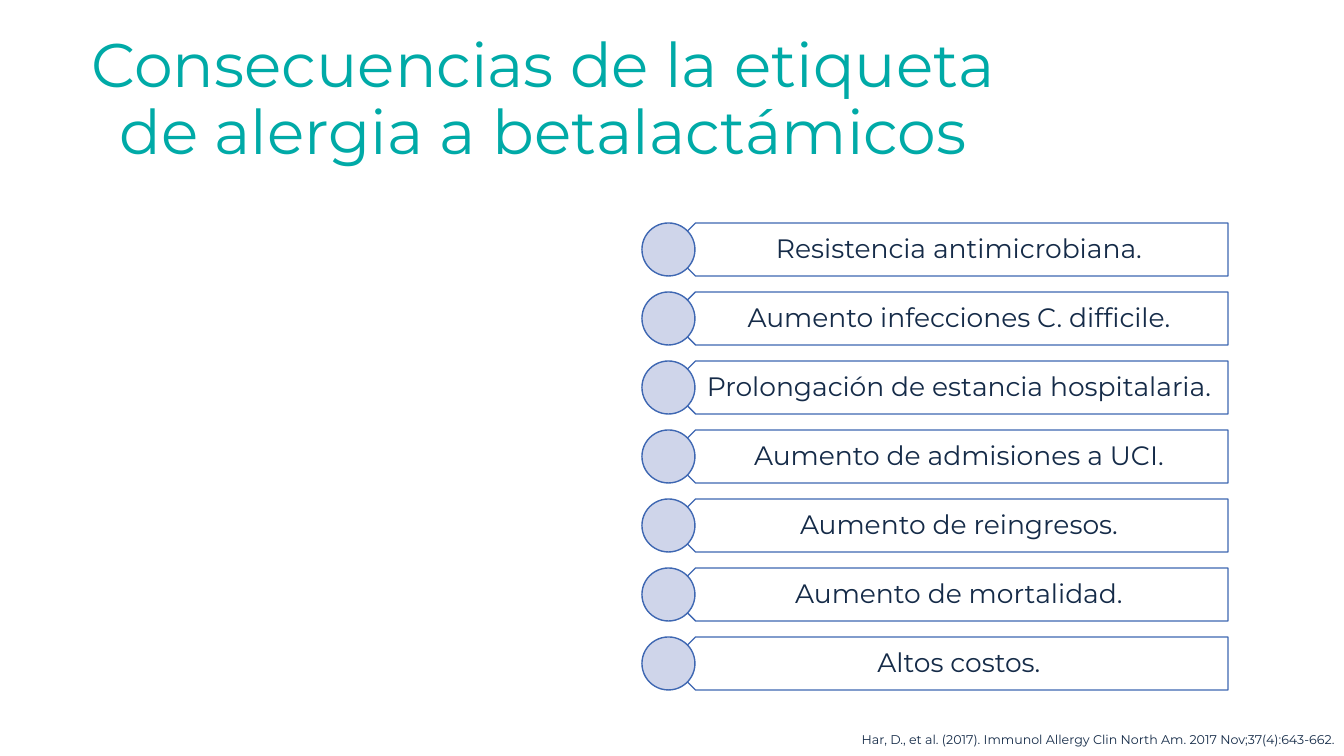
from pptx import Presentation
from pptx import util as u
from pptx.dml.color import RGBColor
from pptx.enum import shapes, text

TEAL = RGBColor(0x00, 0xAA, 0xA7)
NAVY = RGBColor(0x15, 0x2B, 0x48)
BLUE = RGBColor(0x3E, 0x67, 0xB2)
PALE = RGBColor(0xCF, 0xD5, 0xEA)
WHITE = RGBColor(0xFF, 0xFF, 0xFF)

WIDTH, HEIGHT = 1344, 756
TOP, PITCH, SIZE = 223, 69, 53
EFFECTS = (
    "Resistencia antimicrobiana.",
    "Aumento infecciones C. difficile.",
    "Prolongación de estancia hospitalaria.",
    "Aumento de admisiones a UCI.",
    "Aumento de reingresos.",
    "Aumento de mortalidad.",
    "Altos costos.",
)


def px(*values):
    return [u.Emu(round(v * 914400 / 100.8)) for v in values]


class Deck:
    font = "Montserrat"

    def __init__(self):
        self.file = Presentation()
        self.file.slide_width, self.file.slide_height = px(WIDTH, HEIGHT)
        self.slide = self.file.slides.add_slide(self.file.slide_layouts[6])

    def label(self, words, box, size, color, align=text.PP_ALIGN.CENTER,
              anchor=text.MSO_ANCHOR.MIDDLE, space=0.9, pad=(10, 5, 10, 5)):
        frame = self.slide.shapes.add_textbox(*px(*box)).text_frame
        frame.word_wrap = True
        frame.vertical_anchor = anchor
        (frame.margin_left, frame.margin_top,
         frame.margin_right, frame.margin_bottom) = px(*pad)
        para = frame.paragraphs[0]
        para.text = words
        para.alignment = align
        para.line_spacing = space
        para.font.name = self.font
        para.font.size = u.Pt(size)
        para.font.color.rgb = color

    def shape(self, kind, box, fill, turn=0):
        item = self.slide.shapes.add_shape(kind, *px(*box))
        item.rotation = turn
        item.shadow.inherit = False
        item.fill.solid()
        item.fill.fore_color.rgb = fill
        item.line.color.rgb = BLUE
        item.line.width = u.Pt(1)

    def effect(self, words, top):
        kind = shapes.MSO_SHAPE
        self.shape(kind.PENTAGON, (669, top, 559, SIZE), WHITE, 180)
        self.label(words, (682, top, 546, SIZE), 19, NAVY, pad=(23, 8, 15, 8))
        self.shape(kind.OVAL, (642, top, SIZE, SIZE), PALE)


def main():
    deck = Deck()
    deck.label("Consecuencias de la etiqueta de alergia a betalactámicos",
               (58, 28, 971, 146), 44, TEAL)
    for row, words in enumerate(EFFECTS):
        deck.effect(words, TOP + row * PITCH)
    deck.label("Har, D., et al. (2017). Immunol Allergy Clin North Am. "
               "2017 Nov;37(4):643-662.", (0, 727, WIDTH, 25), 9, NAVY,
               text.PP_ALIGN.RIGHT, text.MSO_ANCHOR.TOP, 1.0)
    deck.file.save("out.pptx")


if __name__ == "__main__":
    main()
